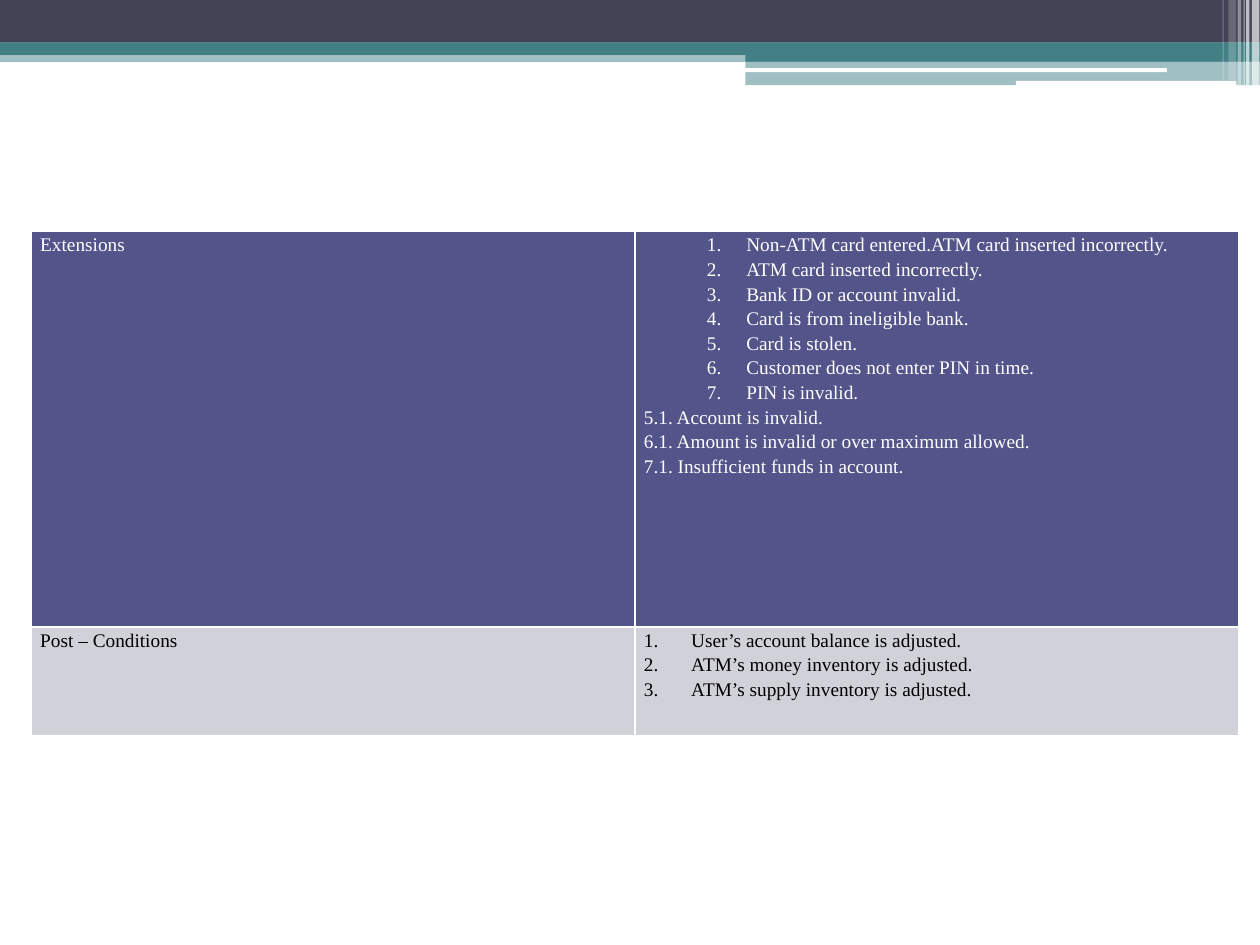
"""Build the slide with the ATM use-case table of extensions and post-conditions."""
from dataclasses import dataclass

from lxml import etree
from pptx import Presentation
from pptx.dml.color import RGBColor
from pptx.enum.shapes import MSO_SHAPE
from pptx.enum.text import PP_ALIGN
from pptx.oxml.ns import qn
from pptx.util import Pt

RECT = MSO_SHAPE.RECTANGLE
ROUND = MSO_SHAPE.ROUNDED_RECTANGLE
JUSTIFY = PP_ALIGN.JUSTIFY


@dataclass(frozen=True)
class Theme:
    """Colours, font and type size."""
    dark: str = "424456"
    teal: str = "438086"
    white: str = "FFFFFF"
    black: str = "000000"
    head: str = "53548A"
    body: str = "D1D1DA"
    font: str = "Times New Roman"
    size: float = 11


T = Theme()
DEEP = {"marL": Pt(58.5), "indent": Pt(-22.5), "lvl": 1}
SHALLOW = {"marL": Pt(27), "indent": Pt(-27)}

BANDS = [
    (RECT, (0, 28.8, 720, 6.6), T.teal, 50),
    (RECT, (0, 0, 720, 24.4), T.dark, 100),
    (RECT, (0, 24.2, 720, 7.2), T.teal, 100),
    (RECT, (426, 28, 294, 7.2), T.teal, 100),
    (RECT, (426, 35, 294, 13.7), T.teal, 50),
    (ROUND, (425.6, 39, 241.2, 2.2), T.white, 100),
    (ROUND, (580.5, 46.2, 126, 2.8), T.white, 100),
]
STRIPES = [
    (715.4, 4.3, 48.8, 65),
    (712, 2, 48.8, 65),
    (710.6, 0.7, 48.8, 60),
    (707.2, 2, 48.8, 40),
    (702, 4.3, 46, 20),
    (698.6, 0.7, 46, 30),
]
ROWS = [
    (226, T.head, T.white, [("Extensions", None)], [
        ("Non-ATM card entered.ATM card inserted incorrectly.", DEEP),
        ("ATM card inserted incorrectly.", DEEP),
        ("Bank ID or account invalid.", DEEP),
        ("Card is from ineligible bank.", DEEP),
        ("Card is stolen.", DEEP),
        ("Customer does not enter PIN in time.", DEEP),
        ("PIN is invalid.", DEEP),
        ("5.1. Account is invalid.", None),
        ("6.1. Amount is invalid or over maximum allowed.", None),
        ("7.1. Insufficient funds in account.", None),
    ]),
    (62, T.body, T.black, [("Post – Conditions", None)], [
        ("User’s account balance is adjusted.", SHALLOW),
        ("ATM’s money inventory is adjusted.", SHALLOW),
        ("ATM’s supply inventory is adjusted.", SHALLOW),
    ]),
]


def apply(obj, values):
    """Set each attribute of an object from a dict."""
    for name, value in values.items():
        setattr(obj, name, value)


def add_bar(s, kind, box, color, alpha):
    """Add a borderless bar with the given opacity in percent."""
    sp = s.shapes.add_shape(kind, *map(Pt, box))
    sp.shadow.inherit = False
    sp.line.fill.background()
    sp.fill.solid()
    sp.fill.fore_color.rgb = RGBColor.from_string(color)
    if alpha < 100:
        clr = sp._element.spPr.find(qn("a:solidFill")).find(qn("a:srgbClr"))
        etree.SubElement(clr, qn("a:alpha"), val=str(alpha * 1000))


def add_borders(cell):
    """Draw a thin white line on all four sides of a cell."""
    tc_pr = cell._tc.get_or_add_tcPr()
    for side in "LRTB":
        ln = etree.SubElement(tc_pr, qn(f"a:ln{side}"), w=str(Pt(1)))
        fill = etree.SubElement(ln, qn("a:solidFill"))
        etree.SubElement(fill, qn("a:srgbClr"), val=T.white)


def add_number(p, indent):
    """Give a paragraph an automatic number and a hanging indent."""
    p_pr = p._p.get_or_add_pPr()
    for name, value in indent.items():
        p_pr.set(name, str(value))
    etree.SubElement(p_pr, qn("a:buFont"), typeface="+mj-lt")
    etree.SubElement(p_pr, qn("a:buAutoNum"), type="arabicPeriod")


def fill_cell(cell, lines, fill, color):
    """Write the lines into a cell and format it."""
    apply(cell, {"margin_left": Pt(5), "margin_right": Pt(5),
                 "margin_top": 0, "margin_bottom": 0})
    add_borders(cell)
    cell.fill.solid()
    cell.fill.fore_color.rgb = RGBColor.from_string(fill)
    tf = cell.text_frame
    for i, (text, indent) in enumerate(lines):
        p = tf.add_paragraph() if i else tf.paragraphs[0]
        if indent:
            add_number(p, indent)
        apply(p, {"alignment": JUSTIFY, "line_spacing": 1.15})
        r = p.add_run()
        r.text = text
        apply(r.font, {"name": T.font, "size": Pt(T.size), "bold": False})
        r.font.color.rgb = RGBColor.from_string(color)


def add_use_case_table(s):
    """Add the two-column use-case table."""
    height = sum(row[0] for row in ROWS)
    table = s.shapes.add_table(len(ROWS), 2, Pt(18), Pt(132.3),
                               Pt(690), Pt(height)).table
    table.horz_banding = False
    for i, (row_height, fill, color, *cells) in enumerate(ROWS):
        table.rows[i].height = Pt(row_height)
        for j, lines in enumerate(cells):
            fill_cell(table.cell(i, j), lines, fill, color)


def main():
    """Build and save the presentation."""
    prs = Presentation()
    apply(prs, {"slide_width": Pt(720), "slide_height": Pt(540)})
    s = prs.slides.add_slide(prs.slide_layouts[6])
    for band in BANDS:
        add_bar(s, *band)
    for left, width, height, alpha in STRIPES:
        add_bar(s, RECT, (left, 0, width, height), T.white, alpha)
    add_use_case_table(s)
    prs.save("out.pptx")


if __name__ == "__main__":
    main()
